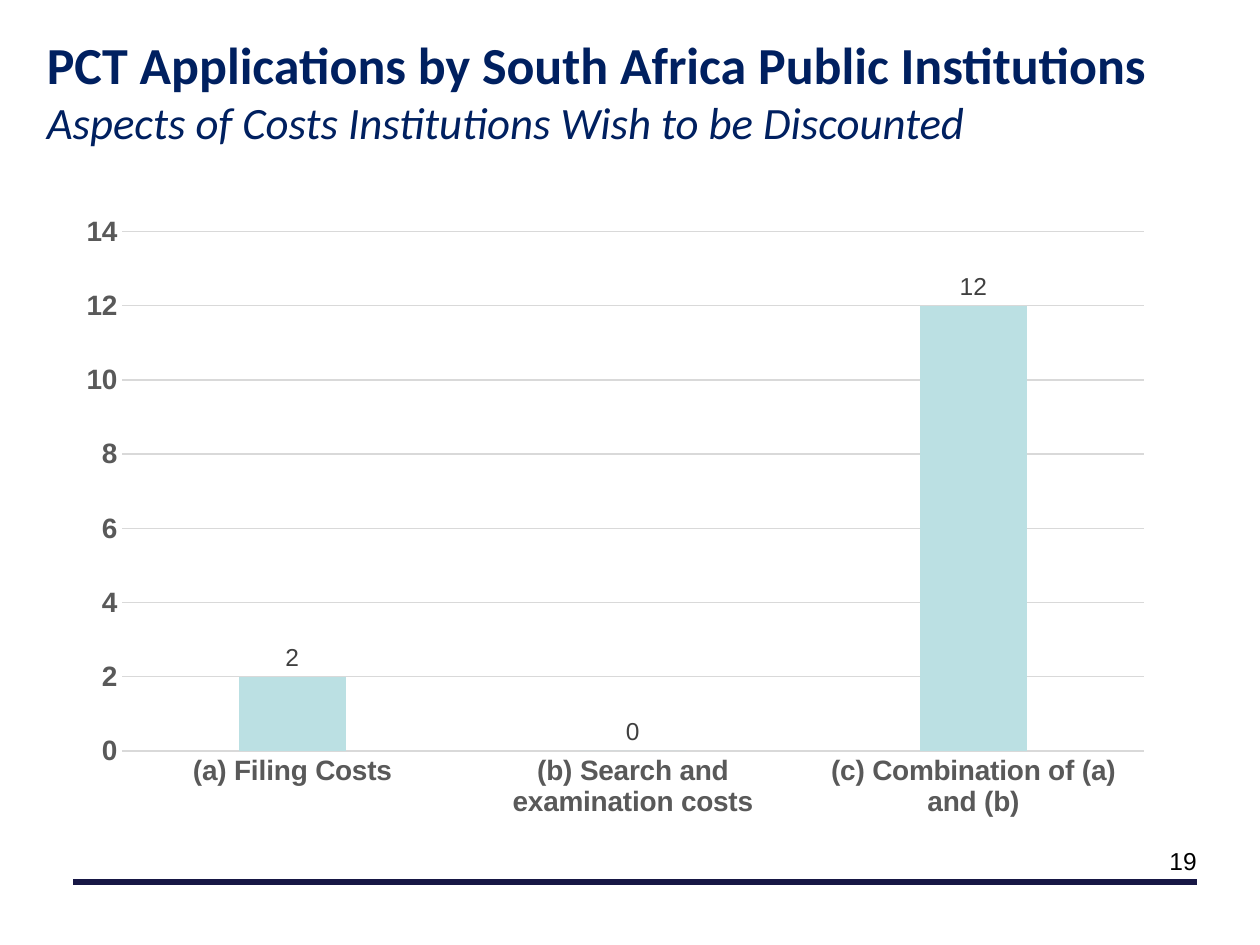
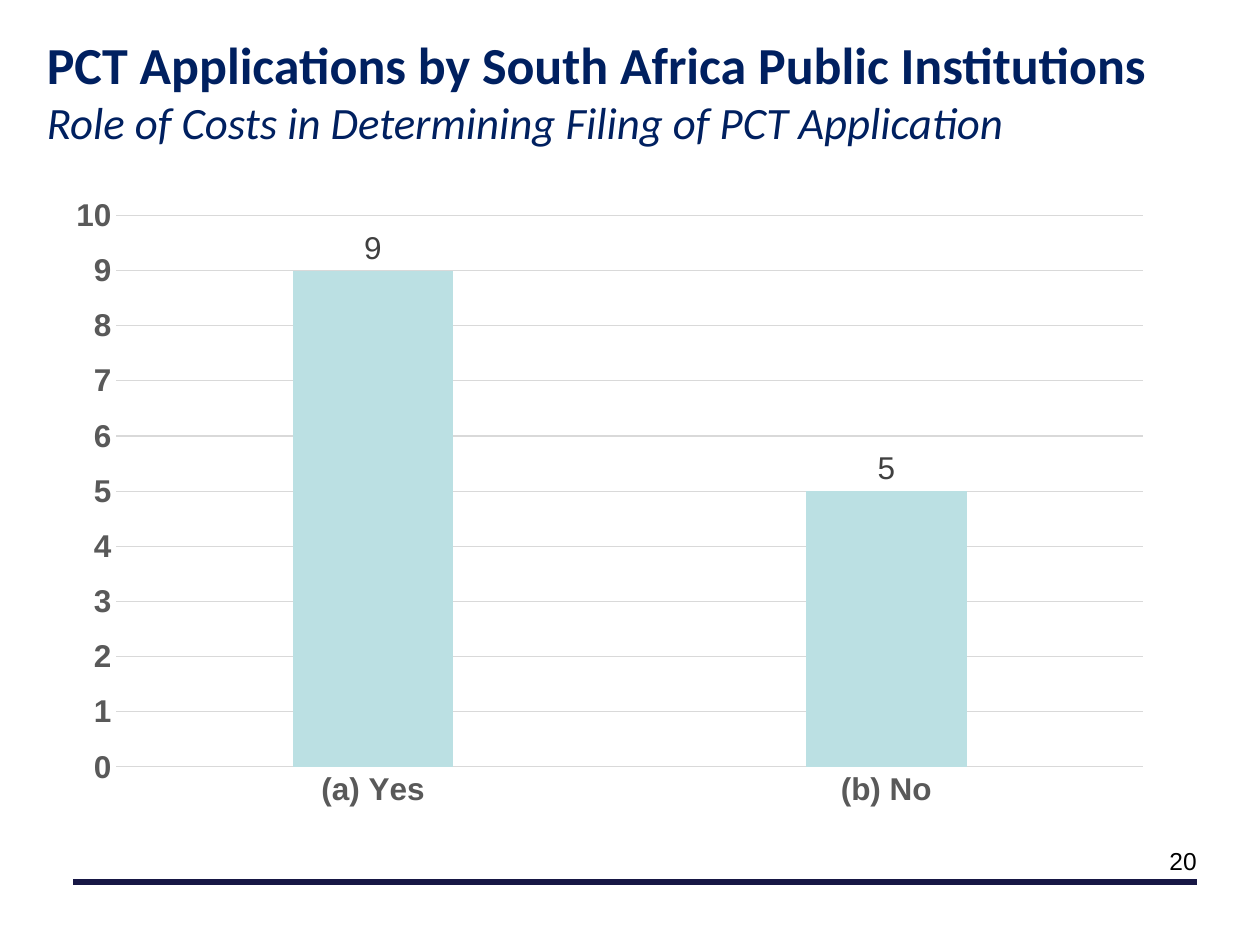
from lxml.etree import SubElement
from pptx import Presentation
from pptx.chart.data import CategoryChartData
from pptx.dml.color import RGBColor
from pptx.enum.chart import XL_CHART_TYPE, XL_LABEL_POSITION, XL_TICK_MARK
from pptx.enum.shapes import MSO_CONNECTOR
from pptx.enum.text import MSO_ANCHOR, MSO_AUTO_SIZE, PP_ALIGN
from pptx.oxml.ns import qn
from pptx.util import Cm, Pt

NAVY = RGBColor(0x00, 0x20, 0x60)
RULE = RGBColor(0x17, 0x17, 0x45)
BAR = RGBColor(0xBB, 0xE0, 0xE3)
GRID = RGBColor(0xD9, 0xD9, 0xD9)
AXIS_TEXT = RGBColor(0x59, 0x59, 0x59)
LABEL_TEXT = RGBColor(0x40, 0x40, 0x40)
BLACK = RGBColor(0x00, 0x00, 0x00)

HEADING = "PCT Applications by South Africa Public Institutions"
FIRST_NUMBER = 19

# Chart boxes are left, top, width, height in centimetres.
SLIDES = [
    {
        "subtitle": "Aspects of Costs Institutions Wish to be Discounted",
        "answers": {
            "(a) Filing Costs": 2,
            "(b) Search and examination costs": 0,
            "(c) Combination of (a) and (b)": 12,
        },
        "chart_box": (1.3, 4.11, 22.2, 12.6),
        "top": 14, "step": 2, "axis_size": 16, "label_size": 14,
    },
    {
        "subtitle": "Role of Costs in Determining Filing of PCT Application",
        "answers": {"(a) Yes": 9, "(b) No": 5},
        "chart_box": (1.09, 3.73, 22.4, 12.8),
        "top": 10, "step": 1, "axis_size": 18, "label_size": 18,
    },
]


def style_font(font, size, color, name="Arial", bold=False, italic=False):
    font.name = name
    font.size = Pt(size)
    font.bold = bold
    font.italic = italic
    font.color.rgb = color


def set_title(page, subtitle):
    title = page.shapes.title
    title.left, title.top, title.width, title.height = Cm(0.69), Cm(0.46), Cm(23.83), Cm(2.72)
    frame = title.text_frame
    frame.text = f"{HEADING}\n{subtitle}"
    frame.auto_size = MSO_AUTO_SIZE.NONE
    frame.vertical_anchor = MSO_ANCHOR.MIDDLE
    for para in frame.paragraphs:
        para.alignment = PP_ALIGN.LEFT
    heading, subheading = frame.paragraphs
    style_font(heading.font, 29.7, NAVY, "Calibri", bold=True)
    style_font(subheading.font, 25.6, NAVY, "Calibri", italic=True)


def add_footer(page, number):
    rule = page.shapes.add_connector(
        MSO_CONNECTOR.STRAIGHT, Cm(1.48), Cm(17.78), Cm(24.13), Cm(17.78))
    rule.line.color.rgb = RULE
    rule.line.width = Pt(3)
    SubElement(rule.element.spPr, qn("a:effectLst"))

    box = page.shapes.add_textbox(Cm(23.29), Cm(16.94), Cm(1.12), Cm(0.84))
    box.text_frame.word_wrap = False
    para = box.text_frame.paragraphs[0]
    para.text = str(number)
    para.alignment = PP_ALIGN.CENTER
    style_font(para.font, 14, BLACK)


def add_answer_chart(page, content):
    data = CategoryChartData()
    data.categories = list(content["answers"])
    data.add_series("Series 1", list(content["answers"].values()))
    chart = page.shapes.add_chart(
        XL_CHART_TYPE.COLUMN_CLUSTERED, *map(Cm, content["chart_box"]), data).chart
    chart.has_legend = False
    chart.has_title = False
    style_font(chart.font, 10, BLACK)

    for axis in (chart.category_axis, chart.value_axis):
        axis.major_tick_mark = axis.minor_tick_mark = XL_TICK_MARK.NONE
        style_font(axis.tick_labels.font, content["axis_size"], AXIS_TEXT, bold=True)
    chart.value_axis.format.line.fill.background()
    chart.value_axis.minimum_scale = 0
    chart.value_axis.maximum_scale = content["top"]
    chart.value_axis.major_unit = content["step"]
    for line in (chart.category_axis.format.line, chart.value_axis.major_gridlines.format.line):
        line.color.rgb = GRID
        line.width = Pt(0.75)

    plot = chart.plots[0]
    plot.gap_width = 219
    plot.overlap = -27
    plot.vary_by_categories = False
    series = plot.series[0]
    series.format.fill.solid()
    series.format.fill.fore_color.rgb = BAR
    labels = series.data_labels
    labels.show_value = True
    labels.position = XL_LABEL_POSITION.OUTSIDE_END
    style_font(labels.font, content["label_size"], LABEL_TEXT)


def main():
    deck = Presentation()
    deck.slide_width, deck.slide_height = Cm(25.4), Cm(19.05)
    title_only = deck.slide_layouts[5]
    for number, content in enumerate(SLIDES, FIRST_NUMBER):
        page = deck.slides.add_slide(title_only)
        add_footer(page, number)
        set_title(page, content["subtitle"])
        add_answer_chart(page, content)
    deck.save("out.pptx")


if __name__ == "__main__":
    main()
